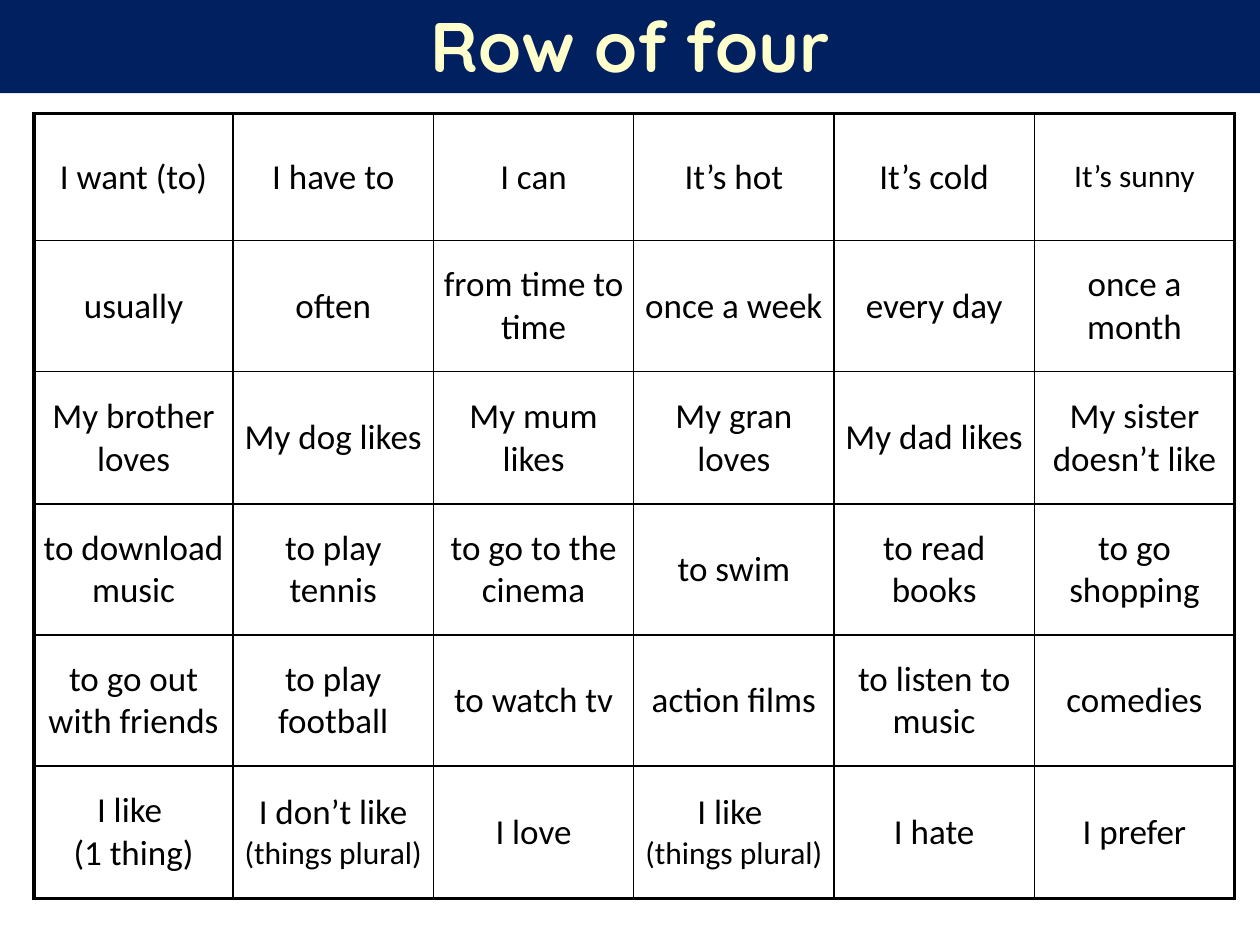
from dataclasses import dataclass

from lxml import etree
from pptx import Presentation
from pptx import util as u
from pptx.dml.color import RGBColor
from pptx.enum import shapes, text
from pptx.oxml import ns

EMU_PER_PX = 9144  # 100 px to the inch
COLORS = {"navy": "002060", "cream": "FFFFCC", "black": "000000"}
GRID_LINE, FRAME_LINE = 1, 2.25
PHRASE_SIZE, SMALL_SIZE = 20, 18


@dataclass(frozen=True)
class Phrase:
    main: str
    detail: str = ""  # smaller second line
    size: int = PHRASE_SIZE


BOARD = [
    ["I want (to)", "I have to", "I can", "It’s hot", "It’s cold",
     Phrase("It’s sunny", size=SMALL_SIZE)],
    ["usually", "often", "from time to time", "once a week", "every day", "once a month"],
    ["My brother loves", "My dog likes", "My mum likes", "My gran loves", "My dad likes",
     "My sister doesn’t like"],
    ["to download music", "to play tennis", "to go to the cinema", "to swim",
     "to read books", "to go shopping"],
    ["to go out with friends", "to play\nfootball", "to watch tv", "action films",
     "to listen to music", "comedies"],
    ["I like \n(1 thing)", Phrase("I don’t like\n", "(things plural)"), "I love",
     Phrase("I like \n", "(things plural)"), "I hate", "I prefer"],
]
COLUMN_WIDTHS = [158] + [159] * 5
ROW_HEIGHTS = [101, 104, 105, 104, 104, 105]


def px(length: int) -> u.Emu:
    return u.Emu(length * EMU_PER_PX)


def write(paragraph, words: str, *, size: int, color: str = "black",
          font: str = "Calibri", bold: bool = False) -> None:
    """Add centred text; each newline becomes a line break."""
    paragraph.alignment = text.PP_ALIGN.CENTER
    for index, line in enumerate(words.split("\n")):
        if index:
            paragraph.add_line_break()
        if line:
            run = paragraph.add_run()
            run.text = line
            run.font.size = u.Pt(size)
            run.font.name = font
            run.font.bold = bold
            run.font.color.rgb = RGBColor.from_string(COLORS[color])


def set_border(cell, side: str, width: float) -> None:
    properties = cell._tc.get_or_add_tcPr()
    line = etree.SubElement(properties, ns.qn(f"a:ln{side}"), w=str(u.Pt(width)))
    fill = etree.SubElement(line, ns.qn("a:solidFill"))
    etree.SubElement(fill, ns.qn("a:srgbClr"), val=COLORS["black"])


def draw_title(slide, words: str) -> None:
    banner = slide.shapes.add_shape(
        shapes.MSO_SHAPE.RECTANGLE, px(0), px(-3), px(1000), px(77))
    banner.shadow.inherit = False
    banner.fill.solid()
    banner.fill.fore_color.rgb = RGBColor.from_string(COLORS["navy"])
    banner.line.fill.background()
    banner.text_frame.vertical_anchor = text.MSO_ANCHOR.MIDDLE
    write(banner.text_frame.paragraphs[0], words, size=40, color="cream",
          font="Quicksand", bold=True)


def draw_cell(cell, phrase: Phrase, frame_sides: dict[str, bool]) -> None:
    cell.vertical_anchor = text.MSO_ANCHOR.MIDDLE
    cell.margin_left = cell.margin_right = px(6)
    cell.margin_top = cell.margin_bottom = px(5)
    for side, on_frame in frame_sides.items():
        set_border(cell, side, FRAME_LINE if on_frame else GRID_LINE)
    cell.fill.background()
    paragraph = cell.text_frame.paragraphs[0]
    write(paragraph, phrase.main, size=phrase.size)
    if phrase.detail:
        write(paragraph, phrase.detail, size=SMALL_SIZE)


def draw_board(slide) -> None:
    board = slide.shapes.add_table(
        len(ROW_HEIGHTS), len(COLUMN_WIDTHS), px(27), px(90),
        px(sum(COLUMN_WIDTHS)), px(sum(ROW_HEIGHTS))).table
    board.first_row = board.horz_banding = False
    for column, width in zip(board.columns, COLUMN_WIDTHS):
        column.width = px(width)
    for row, height in zip(board.rows, ROW_HEIGHTS):
        row.height = px(height)

    last_row, last_column = len(ROW_HEIGHTS) - 1, len(COLUMN_WIDTHS) - 1
    for r, phrases in enumerate(BOARD):
        for c, entry in enumerate(phrases):
            phrase = entry if isinstance(entry, Phrase) else Phrase(entry)
            draw_cell(board.cell(r, c), phrase, {
                "L": c == 0, "R": c == last_column, "T": r == 0, "B": r == last_row})


def main() -> None:
    deck = Presentation()
    deck.slide_width, deck.slide_height = px(1000), px(750)
    slide = deck.slides.add_slide(deck.slide_layouts[6])

    # Title banner
    draw_title(slide, "Row of four")

    # Phrase board
    draw_board(slide)

    deck.save("out.pptx")


if __name__ == "__main__":
    main()
